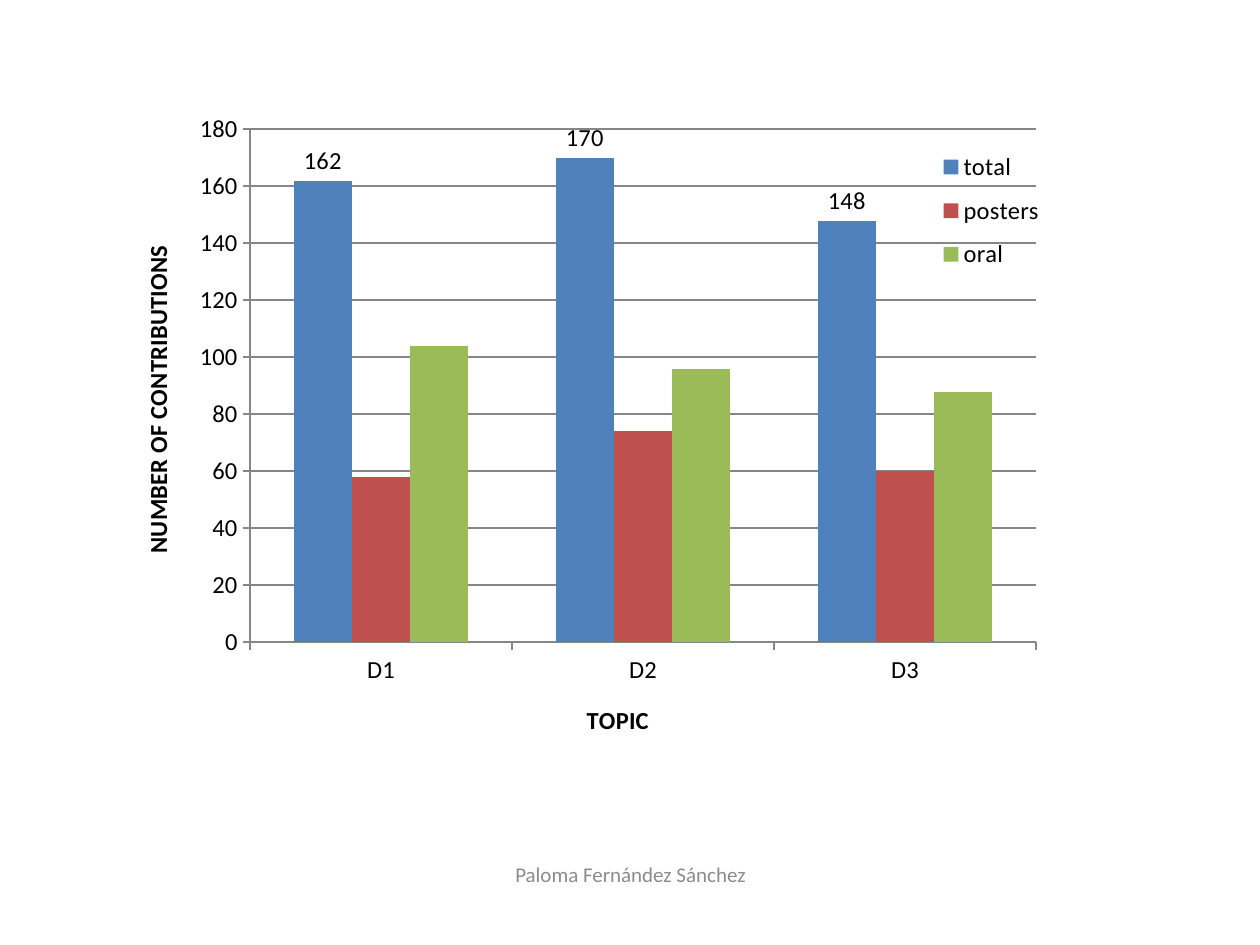
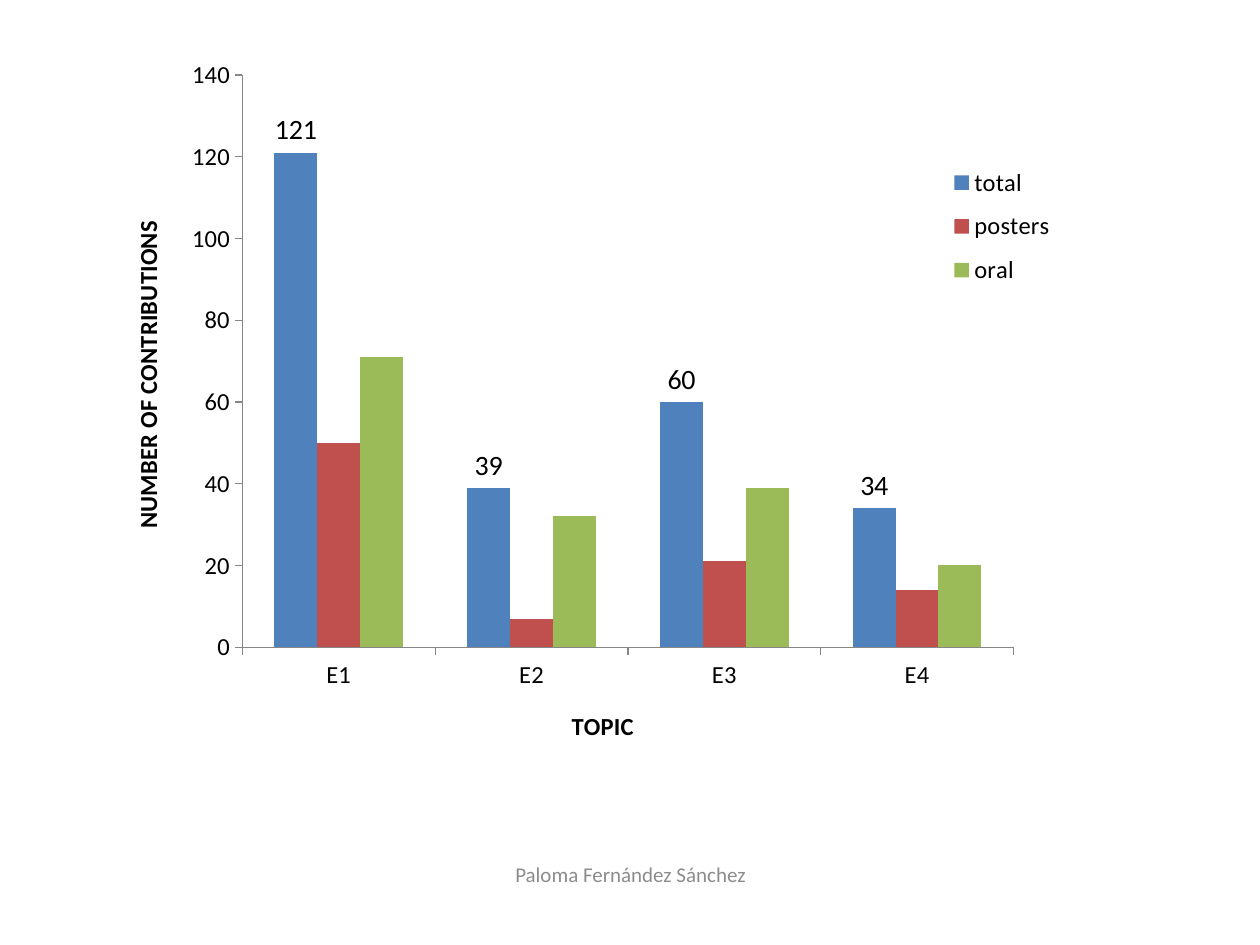
from lxml import etree
from pptx import Presentation
from pptx.chart.data import CategoryChartData
from pptx.dml.color import RGBColor
from pptx.enum.chart import XL_CHART_TYPE, XL_LABEL_POSITION, XL_LEGEND_POSITION, XL_TICK_MARK
from pptx.enum.text import MSO_ANCHOR, PP_ALIGN
from pptx.oxml.ns import qn
from pptx.util import Inches, Pt

CLUSTERED = XL_CHART_TYPE.COLUMN_CLUSTERED
ABOVE_BAR = XL_LABEL_POSITION.OUTSIDE_END
LEGEND_RIGHT = XL_LEGEND_POSITION.RIGHT
TICK_OUTSIDE = XL_TICK_MARK.OUTSIDE
MIDDLE = MSO_ANCHOR.MIDDLE
CENTER = PP_ALIGN.CENTER

FONT = "Calibri"
TEXT_COLOR = "000000"
FOOTER_COLOR = "8C8C8C"
LINE_COLOR = "868686"
SERIES_COLORS = {"total": "4F81BD", "posters": "C0504D", "oral": "9BBB59"}
AXIS_SIZE = 14
BLANK_LAYOUT = 6
FOOTER = "Paloma Fernández Sánchez"

TOPIC_CHARTS = [
    {
        "box": (1.06, 0.84, 7.4, 5.2),
        "topics": ["D1", "D2", "D3"],
        "counts": {"total": [162, 170, 148], "posters": [58, 74, 60], "oral": [104, 96, 88]},
        "plot_area": (0.125, 0.036, 0.843, 0.783),
        "legend_area": (0.85, 0.05, 0.14, 0.22),
        "value_axis": {"maximum_scale": 180, "has_major_gridlines": True},
        "value_line": 1.25,
        "label_size": 14,
    },
    {
        "box": (0.83, 0.36, 8.35, 5.75),
        "topics": ["E1", "E2", "E3", "E4"],
        "counts": {"total": [121, 39, 60, 34], "posters": [50, 7, 21, 14], "oral": [71, 32, 39, 20]},
        "plot_area": (0.131, 0.041, 0.733, 0.79),
        "legend_area": (0.783, 0.15, 0.14, 0.2),
        "value_axis": {"maximum_scale": 140, "has_major_gridlines": False},
        "value_line": 0.75,
        "label_size": 16,
    },
]


def color(value):
    """Turn a hex string into a colour."""
    return RGBColor.from_string(value)


def apply(target, values):
    """Set each attribute named in a dict of format values."""
    for name, value in values.items():
        setattr(target, name, value)


def style_font(font, size, hex_color=TEXT_COLOR, bold=False):
    """Give a font the shared typeface with its size and colour."""
    apply(font, {"name": FONT, "size": Pt(size), "bold": bold})
    font.color.rgb = color(hex_color)


def style_line(line, width):
    """Draw a chart line in the shared grey."""
    line.width = Pt(width)
    line.color.rgb = color(LINE_COLOR)


def place_chart_part(part, index, area, inner=False):
    """Fix a chart part at shares of the chart's size."""
    for layout in part.findall(qn("c:layout")):
        part.remove(layout)
    layout = etree.Element(qn("c:layout"))
    manual = etree.SubElement(layout, qn("c:manualLayout"))
    settings = {"layoutTarget": "inner"} if inner else {}
    settings.update(xMode="edge", yMode="edge")
    settings.update(zip("xywh", area))
    for name, value in settings.items():
        etree.SubElement(manual, qn(f"c:{name}")).set("val", str(value))
    part.insert(index, layout)


def style_axis(axis, title, line_width):
    """Format an axis with its title, tick labels and line."""
    axis.major_tick_mark = TICK_OUTSIDE
    style_font(axis.tick_labels.font, AXIS_SIZE)
    style_line(axis.format.line, line_width)
    frame = axis.axis_title.text_frame
    frame.text = title
    style_font(frame.paragraphs[0].runs[0].font, AXIS_SIZE, bold=True)


def style_legend(chart, area):
    """Show the legend over the chart at the given area."""
    chart.has_legend = True
    apply(chart.legend, {"position": LEGEND_RIGHT, "include_in_layout": False})
    style_font(chart.legend.font, AXIS_SIZE)
    place_chart_part(chart.element.xpath(".//c:legend")[0], 1, area)


def style_columns(plot, label_size):
    """Colour the columns and label the totals."""
    apply(plot, {"gap_width": 150, "overlap": 0, "vary_by_categories": False})
    for series in plot.series:
        series.format.fill.solid()
        series.format.fill.fore_color.rgb = color(SERIES_COLORS[series.name])
    labels = plot.series[0].data_labels
    apply(labels, {"show_value": True, "position": ABOVE_BAR})
    style_font(labels.font, label_size)


def add_topic_chart(slide, box, topics, counts, plot_area, legend_area,
                    value_axis, value_line, label_size):
    """Add a column chart of the contributions per topic."""
    data = CategoryChartData()
    data.categories = topics
    for name, values in counts.items():
        data.add_series(name, values)
    chart = slide.shapes.add_chart(CLUSTERED, *map(Inches, box), data).chart
    chart.has_title = False
    style_font(chart.font, 10)
    style_columns(chart.plots[0], label_size)
    apply(chart.value_axis, {"minimum_scale": 0, "major_unit": 20, **value_axis})
    if chart.value_axis.has_major_gridlines:
        style_line(chart.value_axis.major_gridlines.format.line, value_line)
    style_axis(chart.category_axis, "TOPIC", 0.75)
    style_axis(chart.value_axis, "NUMBER OF CONTRIBUTIONS", value_line)
    style_legend(chart, legend_area)
    place_chart_part(chart.element.xpath(".//c:plotArea")[0], 0, plot_area, inner=True)


def add_footer(slide):
    """Add the centred author's name at the foot of the slide."""
    box = slide.shapes.add_textbox(*map(Inches, (3.42, 6.74, 3.17, 0.4)))
    apply(box.text_frame, {"word_wrap": True, "vertical_anchor": MIDDLE})
    paragraph = box.text_frame.paragraphs[0]
    apply(paragraph, {"text": FOOTER, "alignment": CENTER})
    style_font(paragraph.runs[0].font, 12, FOOTER_COLOR)


def main():
    """Build the slides and save the presentation."""
    presentation = Presentation()
    apply(presentation, {"slide_width": Inches(10), "slide_height": Inches(7.5)})
    for topic_chart in TOPIC_CHARTS:
        slide = presentation.slides.add_slide(presentation.slide_layouts[BLANK_LAYOUT])
        add_topic_chart(slide, **topic_chart)
        add_footer(slide)
    presentation.save("out.pptx")


if __name__ == "__main__":
    main()
